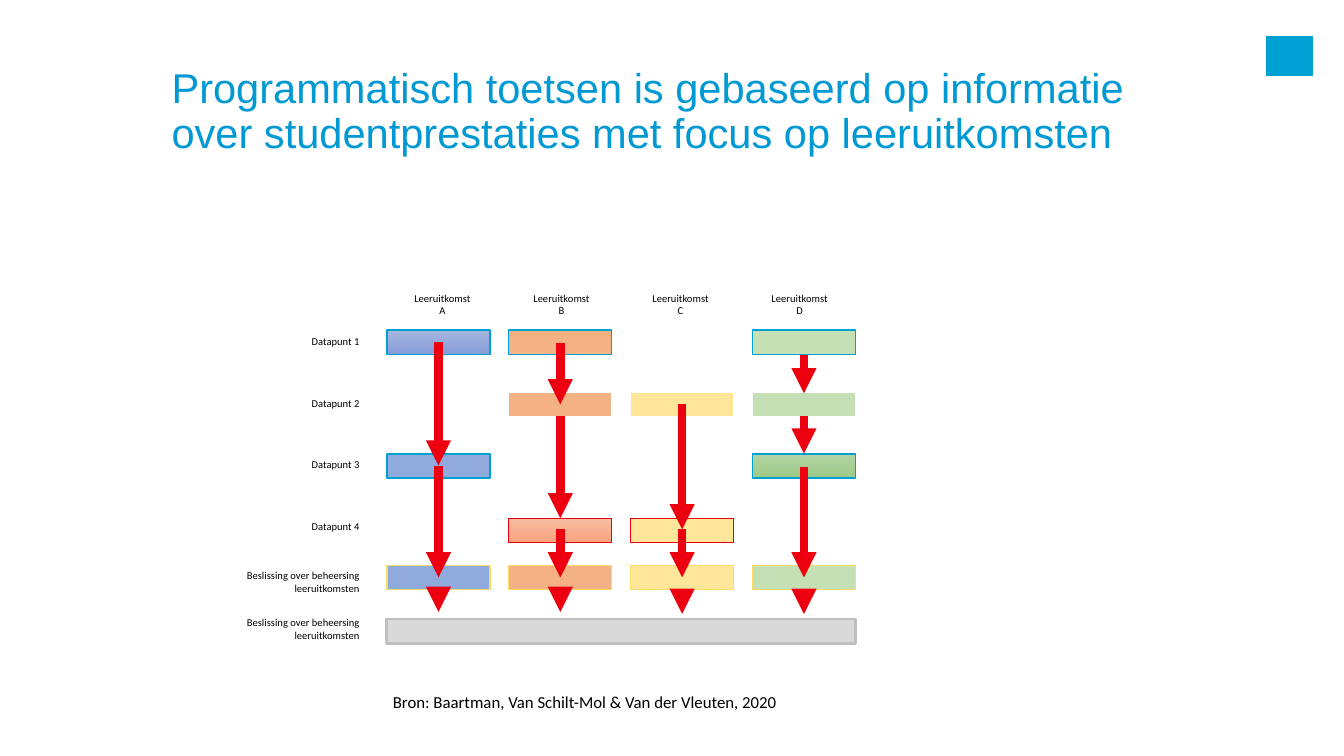
from dataclasses import dataclass
from lxml.etree import SubElement
from pptx import Presentation
from pptx.dml.color import RGBColor
from pptx.enum.shapes import MSO_CONNECTOR, MSO_SHAPE
from pptx.enum.text import MSO_ANCHOR, MSO_AUTO_SIZE, PP_ALIGN
from pptx.oxml.ns import qn
from pptx.util import Cm, Pt


@dataclass(frozen=True)
class Theme:
    title: str = "0099D4"
    text: str = "000000"
    cyan: str = "00A0D2"
    red: str = "EC0010"
    white: str = "FEFFFF"
    gold: str = "FFD966"
    blue: str = "8FAADC"
    orange: str = "F4B183"
    yellow: str = "FFE699"
    green: str = "C5E0B4"
    gray: str = "D9D9D9"
    edge: str = "BFBFBF"
    fade_blue: tuple = ("A6B6DF", "869DD7")
    fade_green: tuple = ("B4D4A5", "9BC985")
    fade_orange: tuple = ("F7BCA2", "F8A47F")
    head_size: float = 29.7
    label_size: float = 7.5
    source_size: float = 12


theme = Theme()
deck = Presentation()
deck.slide_width, deck.slide_height = Cm(33.87), Cm(19.05)
slide = deck.slides.add_slide(deck.slide_layouts[6])
shapes = slide.shapes


def add_text(lines, left, top, width, height, align, size=theme.label_size,
             font="Calibri", color=theme.text):
    box = shapes.add_textbox(Cm(left), Cm(top), Cm(width), Cm(height))
    frame = box.text_frame
    frame.word_wrap = True
    frame.auto_size = MSO_AUTO_SIZE.SHAPE_TO_FIT_TEXT
    frame.margin_left = frame.margin_right = Cm(0.25)
    frame.margin_top = frame.margin_bottom = Cm(0.1)
    for i, line in enumerate(lines):
        para = frame.add_paragraph() if i else frame.paragraphs[0]
        para.alignment = align
        run = para.add_run()
        run.text = line
        run.font.size = Pt(size)
        run.font.name = font
        run.font.color.rgb = RGBColor.from_string(color)
    return frame


def add_bar(left, top, width, height, fill, edge, weight=1):
    bar = shapes.add_shape(MSO_SHAPE.RECTANGLE, Cm(left), Cm(top), Cm(width), Cm(height))
    bar.shadow.inherit = False
    if isinstance(fill, tuple):
        bar.fill.gradient()
        bar.fill.gradient_angle = 270
        for stop, shade in zip(bar.fill.gradient_stops, fill):
            stop.color.rgb = RGBColor.from_string(shade)
    else:
        bar.fill.solid()
        bar.fill.fore_color.rgb = RGBColor.from_string(fill)
    bar.line.color.rgb = RGBColor.from_string(edge)
    bar.line.width = Pt(weight)


add_bar(31.93, 0.92, 1.14, 0.98, theme.cyan, theme.cyan)

title = add_text(
    ["Programmatisch toetsen is gebaseerd op informatie over studentprestaties"
     " met focus op leeruitkomsten "],
    4.29, 1.4, 24.36, 2.87, PP_ALIGN.CENTER, theme.head_size, "Arial", theme.title)
title.auto_size = MSO_AUTO_SIZE.NONE
title.vertical_anchor = MSO_ANCHOR.MIDDLE
title.margin_left = 0
title.margin_top = title.margin_bottom = Cm(0.13)
title.paragraphs[0].line_spacing = 0.9

for i, name in enumerate("ABCD"):
    add_text(["Leeruitkomst", name], 8.43 + 3 * i, 7.25, 5.44, 0.84, PP_ALIGN.CENTER)

verdict = "Beslissing over beheersing leeruitkomsten"
labels = [("Datapunt 1", 8.33, 5), ("Datapunt 2", 9.91, 5), ("Datapunt 3", 11.43, 5),
          ("Datapunt 4", 13, 5), (verdict, 14.25, 3.89), (verdict, 15.42, 3.89)]
for label, top, width in labels:
    add_text([label], 9.31 - width, top, width, 0.5, PP_ALIGN.RIGHT)

start, pitch, wide, high = 9.75, 3.07, 2.6, 0.61
rows = [
    (8.32, theme.cyan, [theme.fade_blue, theme.orange, None, theme.green]),
    (9.88, theme.white, [None, theme.orange, theme.yellow, theme.green]),
    (11.44, theme.cyan, [theme.blue, None, None, theme.fade_green]),
    (13.06, theme.red, [None, theme.fade_orange, theme.yellow, None]),
    (14.25, theme.gold, [theme.blue, theme.orange, theme.yellow, theme.green]),
]
for top, edge, fills in rows:
    for i, fill in enumerate(fills):
        if fill:
            add_bar(start + i * pitch, top, wide, high, fill, edge)
add_bar(start, 15.6, 3 * pitch + wide, high, theme.gray, theme.edge, 2)

arrows = [
    [(8.61, 11.73), (11.73, 14.55), (14.81, 15.42)],
    [(8.64, 10.19), (10.49, 13.06), (13.34, 14.55), (14.81, 15.42)],
    [(10.19, 13.34), (13.34, 14.55), (14.86, 15.47)],
    [(8.94, 9.91), (10.49, 11.43), (11.76, 14.55), (14.86, 15.47)],
]
for i, spans in enumerate(arrows):
    mid = Cm(start + i * pitch + wide / 2)
    for top, end in spans:
        arrow = shapes.add_connector(MSO_CONNECTOR.STRAIGHT, mid, Cm(top), mid, Cm(end))
        arrow.line.color.rgb = RGBColor.from_string(theme.red)
        arrow.line.width = Pt(6)
        SubElement(arrow.line._get_or_add_ln(), qn("a:tailEnd"), type="triangle")
        SubElement(arrow._element.spPr, qn("a:effectLst"))

add_text(["Bron: Baartman, Van Schilt-Mol & Van der Vleuten, 2020"],
         9.65, 17.32, 11.53, 0.71, PP_ALIGN.LEFT, theme.source_size)

deck.save("out.pptx")
